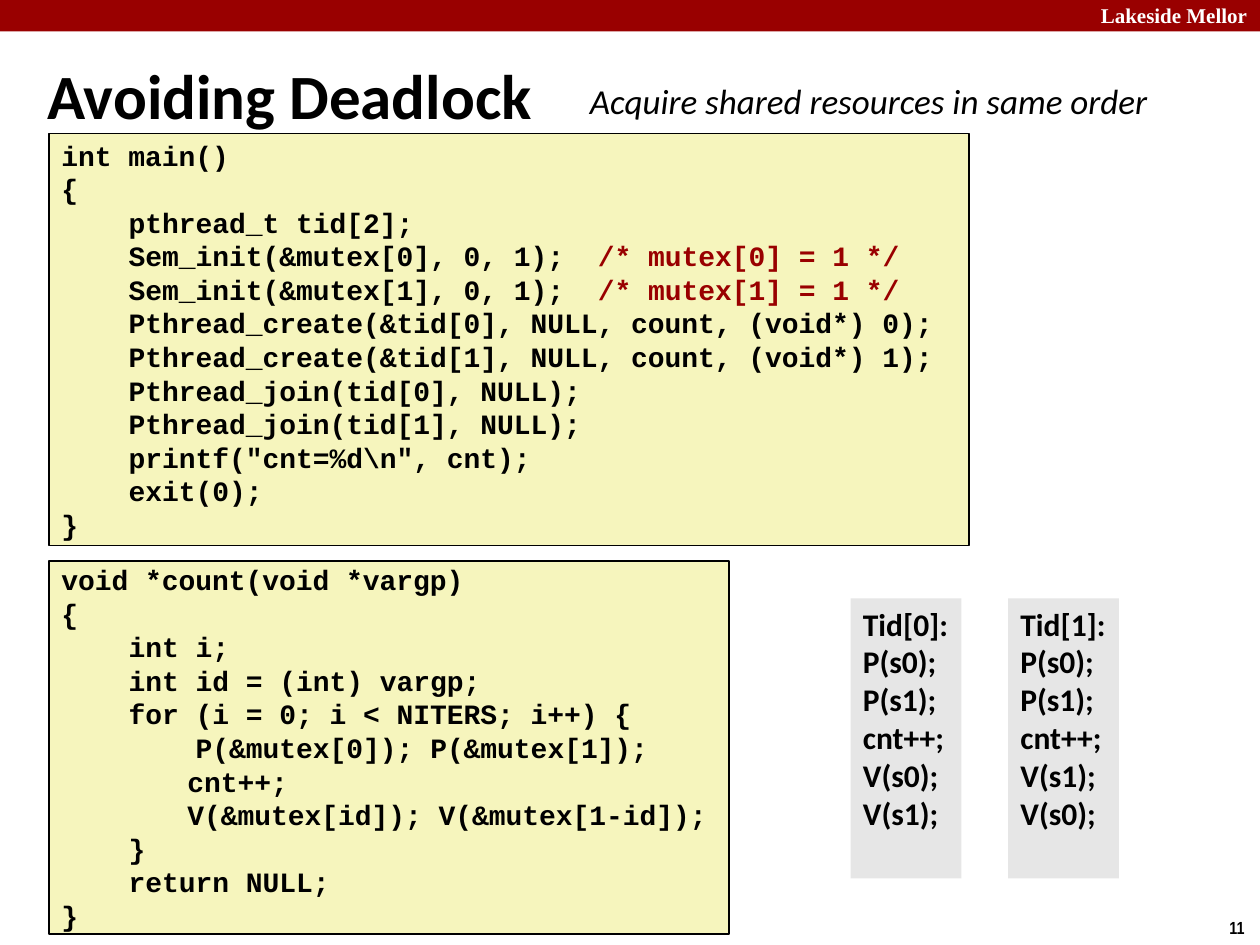
from pptx import Presentation
from pptx.dml.color import RGBColor
from pptx.enum.shapes import MSO_SHAPE
from pptx.enum.text import MSO_ANCHOR, PP_ALIGN
from pptx.util import Pt

RECTANGLE = MSO_SHAPE.RECTANGLE
TOP, MIDDLE = MSO_ANCHOR.TOP, MSO_ANCHOR.MIDDLE
LEFT = PP_ALIGN.LEFT

BLACK = RGBColor(0x00, 0x00, 0x00)
WHITE = RGBColor(0xFF, 0xFF, 0xFF)
RED = RGBColor(0x99, 0x00, 0x00)
CREAM = RGBColor(0xF6, 0xF5, 0xBD)
GREY = RGBColor(0xE6, 0xE6, 0xE6)

# Text formats
TITLE = {"name": "Calibri", "size": Pt(36), "bold": True}
SUBTITLE = {"name": "Calibri", "size": Pt(20), "italic": True}
CODE = {"name": "Courier New", "size": Pt(16), "bold": True}
TRACE = {"name": "Calibri", "size": Pt(18), "bold": True}
HEADER = {"name": "Times New Roman", "size": Pt(12), "bold": True}
NUMBER = {"name": "Arial Narrow", "size": Pt(10), "bold": True}

# Code indents in points: four columns, eight columns, one tab stop
STEP, DEEP, TAB = 38.4, 76.8, 72

# Lines are (indent, text, comment)
MAIN_CODE = [
    (0, "int main()", ""),
    (0, "{", ""),
    (STEP, "pthread_t tid[2];", ""),
    (STEP, "Sem_init(&mutex[0], 0, 1);  ", "/* mutex[0] = 1 */"),
    (STEP, "Sem_init(&mutex[1], 0, 1);  ", "/* mutex[1] = 1 */"),
    (STEP, "Pthread_create(&tid[0], NULL, count, (void*) 0);", ""),
    (STEP, "Pthread_create(&tid[1], NULL, count, (void*) 1);", ""),
    (STEP, "Pthread_join(tid[0], NULL);", ""),
    (STEP, "Pthread_join(tid[1], NULL);", ""),
    (STEP, 'printf("cnt=%d\\n", cnt);', ""),
    (STEP, "exit(0);", ""),
    (0, "}", ""),
]
COUNT_CODE = [
    (0, "void *count(void *vargp)", ""),
    (0, "{", ""),
    (STEP, "int i;", ""),
    (STEP, "int id = (int) vargp;", ""),
    (STEP, "for (i = 0; i < NITERS; i++) {", ""),
    (DEEP, "P(&mutex[0]); P(&mutex[1]);", ""),
    (TAB, "cnt++;", ""),
    (TAB, "V(&mutex[id]); V(&mutex[1-id]);", ""),
    (STEP, "}", ""),
    (STEP, "return NULL;", ""),
    (0, "}", ""),
]
TRACES = [
    ["Tid[0]:", "P(s0);", "P(s1);", "cnt++;", "V(s0);", "V(s1);"],
    ["Tid[1]:", "P(s0);", "P(s1);", "cnt++;", "V(s1);", "V(s0);"],
]
# (text, position, format, colour, anchor)
LABELS = [
    ("Lakeside Mellor", (622, -2, 103, 21.6), HEADER, WHITE, TOP),
    ("11", (695.5, 520.5, 24.5, 19.5), NUMBER, BLACK, TOP),
    ("Avoiding Deadlock", (20, 24, 598, 60), TITLE, BLACK, MIDDLE),
    ("Acquire shared resources in same order", (330, 41.8, 335.5, 31.7), SUBTITLE, BLACK, TOP),
]
# (lines, position)
CODE_BOXES = [
    (MAIN_CODE, (28, 76.3, 525.6, 235.5)),
    (COUNT_CODE, (28, 320.4, 388.8, 213.2)),
]
TRACE_LEFT, TRACE_TOP, TRACE_WIDTH, TRACE_HEIGHT, TRACE_PITCH = 486, 342, 63.4, 160, 90


def add_box(page, position, fill, outline=None):
    box = page.shapes.add_shape(RECTANGLE, *map(Pt, position))
    box.shadow.inherit = False
    box.fill.solid()
    box.fill.fore_color.rgb = fill
    if outline is None:
        box.line.fill.background()
    else:
        box.line.color.rgb = outline
        box.line.width = Pt(1)
    return box


def add_span(para, text, style, colour):
    span = para.add_run()
    span.text = text
    for key, value in style.items():
        setattr(span.font, key, value)
    span.font.color.rgb = colour


def write(box, lines, style, colour=BLACK, anchor=TOP, wrap=False):
    frame = box.text_frame
    frame.word_wrap = wrap
    frame.vertical_anchor = anchor
    for index, (indent, text, comment) in enumerate(lines):
        para = frame.add_paragraph() if index else frame.paragraphs[0]
        para.alignment = LEFT
        if indent:
            properties = para._p.get_or_add_pPr()
            properties.set("marL", str(int(Pt(indent))))
            properties.set("indent", "0")
        add_span(para, text, style, colour)
        if comment:
            add_span(para, comment, style, RED)


def main():
    deck = Presentation()
    deck.slide_width, deck.slide_height = Pt(720), Pt(540)
    page = deck.slides.add_slide(deck.slide_layouts[6])

    # Header band, then title, subtitle and page number
    add_box(page, (0, 0, 720, 18), RED)
    for text, position, style, colour, anchor in LABELS:
        box = page.shapes.add_textbox(*map(Pt, position))
        write(box, [(0, text, "")], style, colour, anchor, wrap=style is TITLE)

    # Code listings
    for lines, position in CODE_BOXES:
        box = add_box(page, position, CREAM, BLACK)
        box.text_frame.margin_top = box.text_frame.margin_bottom = 0
        write(box, lines, CODE, anchor=MIDDLE, wrap=True)

    # Order of operations in each thread
    for column, steps in enumerate(TRACES):
        left = TRACE_LEFT + column * TRACE_PITCH
        box = add_box(page, (left, TRACE_TOP, TRACE_WIDTH, TRACE_HEIGHT), GREY)
        write(box, [(0, step, "") for step in steps], TRACE)

    deck.save("out.pptx")


if __name__ == "__main__":
    main()
